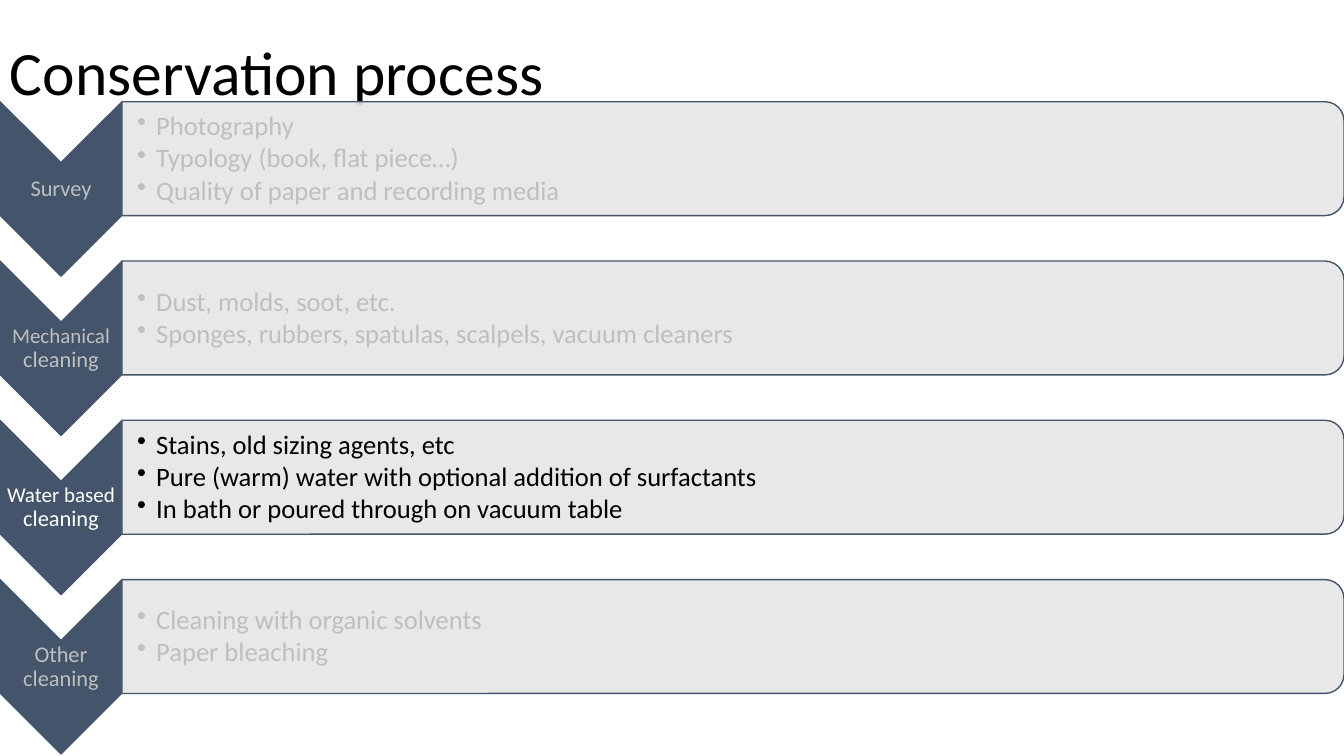
from dataclasses import dataclass

from lxml import etree
from pptx import Presentation
from pptx import util as u
from pptx.dml.color import RGBColor
from pptx.enum import shapes, text
from pptx.oxml import ns
from pptx.shapes.autoshape import Shape
from pptx.slide import Slide

COLORS = {
    "navy": "44546A",
    "panel": "E7E6E6",
    "muted": "BFBFBF",
    "black": "000000",
    "white": "FFFFFF",
}
FONT = "Calibri"

FIRST_TOP, STEP_PITCH = 1.01, 1.58
CHEVRON_WIDTH, CHEVRON_HEIGHT = 1.21, 1.73
PANEL_WIDTH, PANEL_HEIGHT = 12.12, 1.13
BULLET_INDENT = 0.19


@dataclass(frozen=True)
class Run:
    words: str
    size: float


@dataclass(frozen=True)
class Step:
    label: list[Run]
    details: list[str]
    label_color: str = "muted"
    detail_color: str = "muted"


STEPS = [
    Step(
        [Run("Survey", 16)],
        ["Photography", "Typology (book, flat piece…)", "Quality of paper and recording media"],
    ),
    Step(
        [Run("Mechanical ", 15), Run("cleaning", 16)],
        ["Dust, molds, soot, etc.", "Sponges, rubbers, spatulas, scalpels, vacuum cleaners"],
    ),
    Step(
        [Run("Water based ", 15), Run("cleaning", 16)],
        [
            "Stains, old sizing agents, etc",
            "Pure (warm) water with optional addition of surfactants",
            "In bath or poured through on vacuum table",
        ],
        label_color="white",
        detail_color="black",
    ),
    Step(
        [Run("Other cleaning", 16)],
        ["Cleaning with organic solvents", "Paper bleaching"],
    ),
]


def rgb(name: str) -> RGBColor:
    return RGBColor.from_string(COLORS[name])


def add_turned_shape(slide: Slide, kind: shapes.MSO_SHAPE, left: float, top: float,
                     width: float, height: float, fill: str) -> Shape:
    """Add a shape turned by 90 degrees that covers the given box once turned."""
    shape = slide.shapes.add_shape(
        kind,
        u.Inches(left + (width - height) / 2),
        u.Inches(top + (height - width) / 2),
        u.Inches(height),
        u.Inches(width),
    )
    shape.rotation = 90
    shape.shadow.inherit = False
    shape.fill.solid()
    shape.fill.fore_color.rgb = rgb(fill)
    shape.line.color.rgb = rgb("navy")
    shape.line.width = u.Pt(1)
    return shape


def set_opacity(shape: Shape, percent: int) -> None:
    color = shape.fill._xPr.find(ns.qn("a:solidFill"))[0]
    etree.SubElement(color, ns.qn("a:alpha"), val=str(percent * 1000))


def add_text(slide: Slide, left: float, top: float, width: float, height: float,
             paragraphs: list[list[Run]], color: str, left_inset: float = 0.01,
             inset: float = 0.01, centered: bool = False, bulleted: bool = False) -> None:
    box = slide.shapes.add_textbox(
        u.Inches(left), u.Inches(top), u.Inches(width), u.Inches(height)
    )
    frame = box.text_frame
    frame.word_wrap = True
    frame.vertical_anchor = text.MSO_ANCHOR.MIDDLE
    frame.margin_left = u.Inches(left_inset)
    frame.margin_right = frame.margin_top = frame.margin_bottom = u.Inches(inset)
    for index, runs in enumerate(paragraphs):
        paragraph = frame.add_paragraph() if index else frame.paragraphs[0]
        paragraph.line_spacing = 0.9
        paragraph.alignment = text.PP_ALIGN.CENTER if centered else text.PP_ALIGN.LEFT
        for item in runs:
            run = paragraph.add_run()
            run.text = item.words
            run.font.name = FONT
            run.font.size = u.Pt(item.size)
            run.font.color.rgb = rgb(color)
        if bulleted:
            paragraph.level = 1
            paragraph.space_after = u.Pt(2.5)
            properties = paragraph._p.get_or_add_pPr()
            properties.set("marL", str(u.Inches(BULLET_INDENT)))
            properties.set("indent", str(-u.Inches(BULLET_INDENT)))
            etree.SubElement(properties, ns.qn("a:buChar"), char="•")


def add_step(slide: Slide, step: Step, top: float) -> None:
    add_turned_shape(slide, shapes.MSO_SHAPE.CHEVRON, 0, top,
                     CHEVRON_WIDTH, CHEVRON_HEIGHT, "navy")
    add_text(slide, 0, top + 0.61, CHEVRON_WIDTH, 0.52, [step.label],
             step.label_color, centered=True)
    panel = add_turned_shape(slide, shapes.MSO_SHAPE.ROUND_2_SAME_RECTANGLE, CHEVRON_WIDTH,
                             top, PANEL_WIDTH, PANEL_HEIGHT, "panel")
    set_opacity(panel, 90)
    add_text(slide, CHEVRON_WIDTH, top + 0.06, 12.07, 1.02,
             [[Run(detail, 19)] for detail in step.details],
             step.detail_color, left_inset=0.15, bulleted=True)


def main() -> None:
    presentation = Presentation()
    presentation.slide_width = u.Inches(13.33)
    presentation.slide_height = u.Inches(7.5)
    slide = presentation.slides.add_slide(presentation.slide_layouts[6])
    add_text(slide, 0, 0.02, 11.5, 1.45, [[Run("Conservation process", 44)]],
             "black", left_inset=0.1, inset=0.05)
    for index, step in enumerate(STEPS):
        add_step(slide, step, FIRST_TOP + index * STEP_PITCH)
    presentation.save("out.pptx")


if __name__ == "__main__":
    main()
